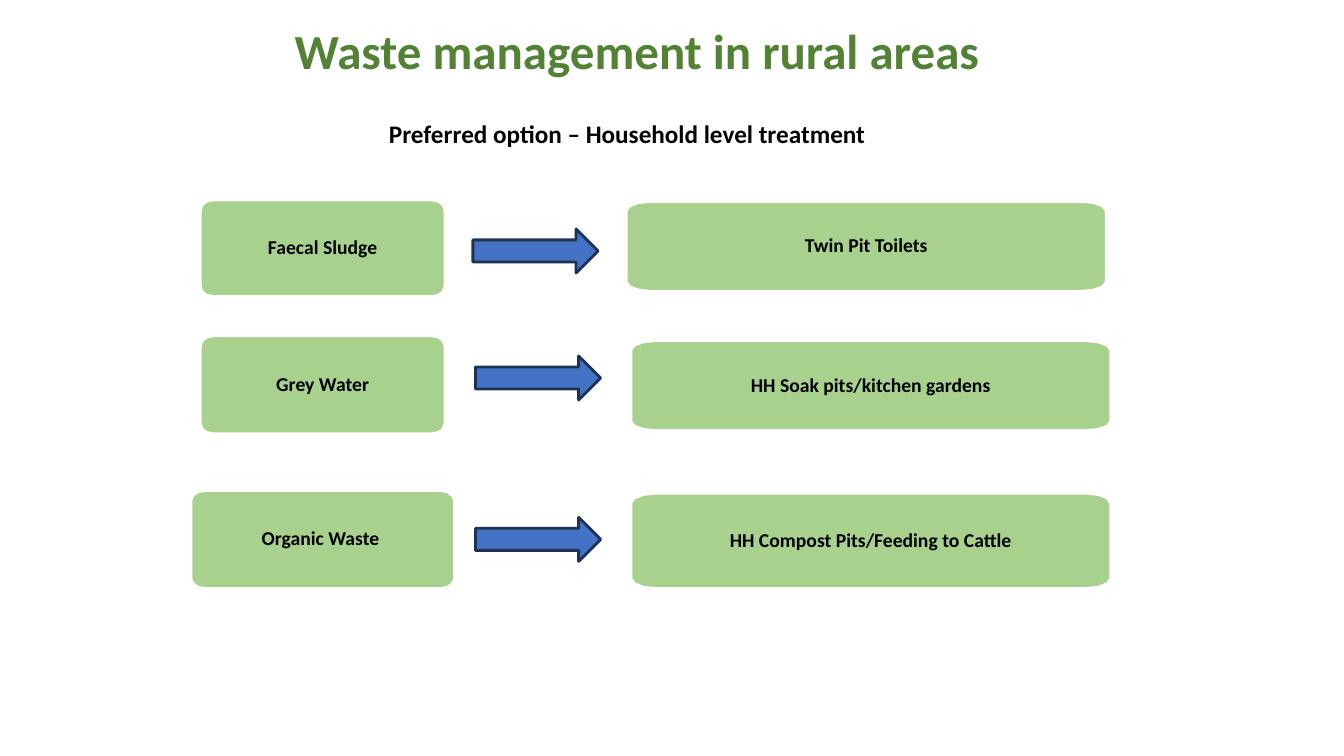
from math import cos, radians, sin

from pptx import Presentation
from pptx.dml.color import RGBColor
from pptx.enum import shapes, text
from pptx.util import Pt

COLOURS = {
    "white": "FFFFFF",
    "black": "000000",
    "title": "548235",
    "box": "A9D18E",
    "arrow": "4472C4",
    "arrow_line": "1E3256",
}

# Waste, its box, arrow position, treatment, its box (left, top, width, height)
ROWS = [
    ("Faecal Sludge", (143.5, 143.25, 174, 68.25), (337.75, 163.5),
     "Twin Pit Toilets", (447.75, 144.25, 342, 63.5)),
    ("Grey Water", (143.5, 240.25, 174, 69.25), (339.6, 254.25),
     "HH Soak pits/kitchen gardens", (451, 243.75, 342, 63.5)),
    ("Organic Waste ", (136.75, 350.75, 187.5, 69.25), (339.6, 369.5),
     "HH Compost Pits/Feeding to Cattle", (451, 352.75, 342, 67.25)),
]


def write(shape, words, size, colour="black", margins=(0, 0),
          anchor=text.MSO_ANCHOR.TOP, line_spacing=None, space_after=0):
    """Put one bold centred paragraph in a shape; margins are sides, then top and bottom."""
    frame = shape.text_frame
    frame.word_wrap = True
    frame.vertical_anchor = anchor
    frame.margin_left = frame.margin_right = Pt(margins[0])
    frame.margin_top = frame.margin_bottom = Pt(margins[1])
    paragraph = frame.paragraphs[0]
    paragraph.alignment = text.PP_ALIGN.CENTER
    paragraph.line_spacing = line_spacing
    paragraph.space_after = Pt(space_after)
    run = paragraph.add_run()
    run.text = words
    run.font.name = "Calibri"
    run.font.size = Pt(size)
    run.font.bold = True
    run.font.color.rgb = RGBColor.from_string(COLOURS[colour])


def paint(shape, fill, line=None, line_width=0):
    shape.shadow.inherit = False
    shape.fill.solid()
    shape.fill.fore_color.rgb = RGBColor.from_string(COLOURS[fill])
    if line is None:
        shape.line.fill.background()
    else:
        shape.line.color.rgb = RGBColor.from_string(COLOURS[line])
        shape.line.width = Pt(line_width)


presentation = Presentation()
presentation.slide_width, presentation.slide_height = Pt(960), Pt(540)
slide = presentation.slides.add_slide(presentation.slide_layouts[6])

title = slide.shapes.add_shape(shapes.MSO_SHAPE.RECTANGLE,
                               Pt(11), Pt(19.5), Pt(880.5), Pt(33))
paint(title, "white")
write(title, " Waste management in rural areas", 35, colour="title",
      line_spacing=0.9, space_after=12.2)

subtitle = slide.shapes.add_textbox(Pt(26), Pt(80.9), Pt(844), Pt(29))
write(subtitle, "Preferred option – Household level treatment", 18,
      margins=(7.2, 3.6))
subtitle.text_frame.auto_size = text.MSO_AUTO_SIZE.SHAPE_TO_FIT_TEXT

for waste, waste_box, arrow_position, treatment, treatment_box in ROWS:
    for words, box in ((waste, waste_box), (treatment, treatment_box)):
        left, top, width, height = box
        # Elliptical corners: 5% of the width by 10% of the height
        radius_x, radius_y = 0.05 * width, 0.1 * height
        corners = [
            (left + radius_x, top + radius_y, 180),
            (left + width - radius_x, top + radius_y, 270),
            (left + width - radius_x, top + height - radius_y, 0),
            (left + radius_x, top + height - radius_y, 90),
        ]
        outline = [
            (Pt(x + radius_x * cos(radians(start + turn))),
             Pt(y + radius_y * sin(radians(start + turn))))
            for x, y, start in corners
            for turn in (0, 30, 60, 90)
        ]
        builder = slide.shapes.build_freeform(*outline[0])
        builder.add_line_segments(outline[1:], close=True)
        panel = builder.convert_to_shape()
        paint(panel, "box", "white", 1.25)
        write(panel, words, 14, margins=(3, 3),
              anchor=text.MSO_ANCHOR.MIDDLE, line_spacing=0.9, space_after=4.9)

    arrow_left, arrow_top = arrow_position
    arrow = slide.shapes.add_shape(shapes.MSO_SHAPE.RIGHT_ARROW, Pt(arrow_left),
                                   Pt(arrow_top), Pt(89.5), Pt(31.5))
    paint(arrow, "arrow", "arrow_line", 2)

presentation.save("out.pptx")
